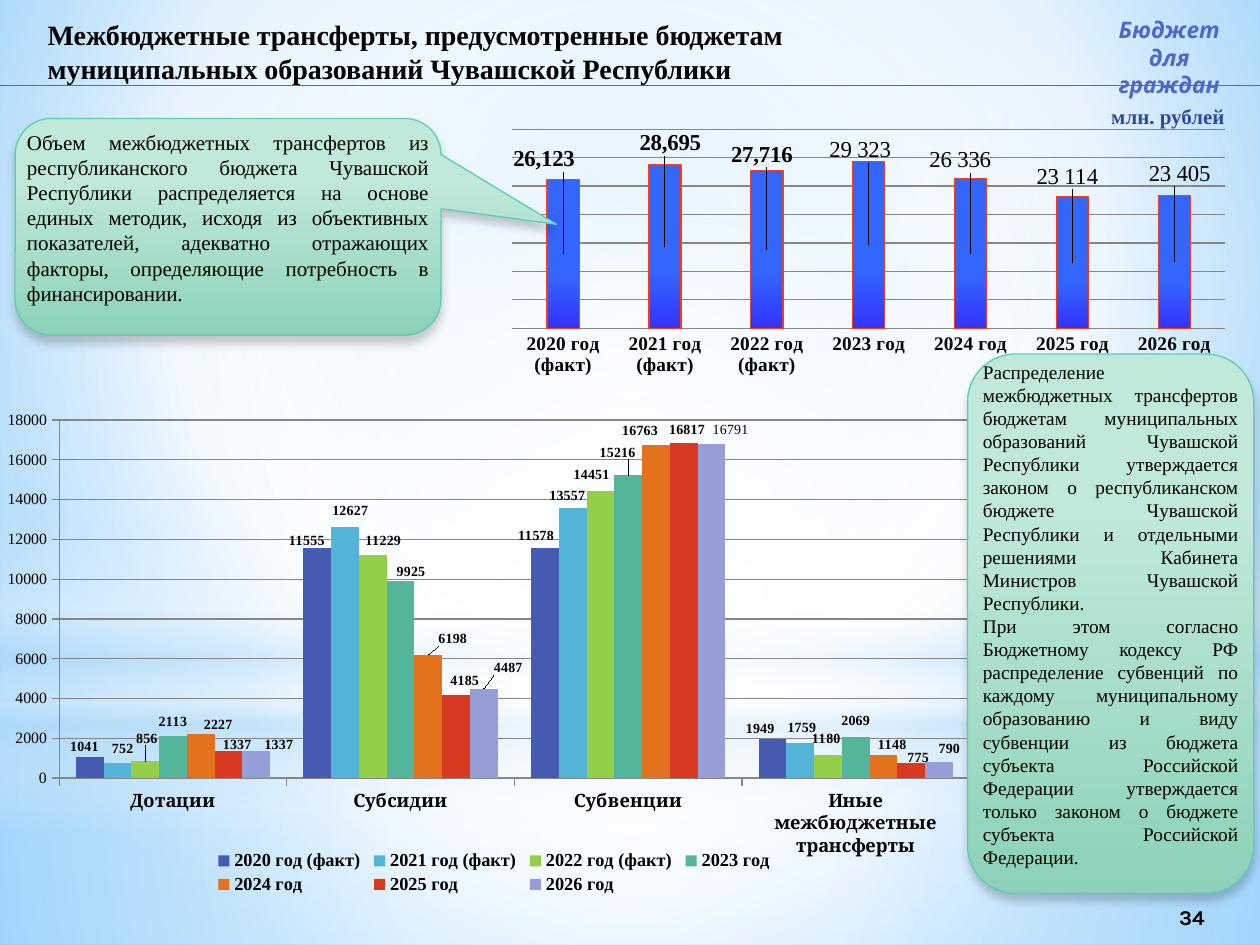
from dataclasses import dataclass
from typing import NamedTuple, Optional

from pptx import Presentation, oxml
from pptx import util as u
from pptx.chart import data as chartdata
from pptx.dml.color import RGBColor
from pptx.enum import chart as charts, shapes, text
from pptx.oxml import ns


@dataclass(frozen=True)
class Theme:
    serif: str = "Times New Roman"
    sans: str = "Karla"
    category: str = "Cambria"
    ink: str = "000000"
    accent: str = "4E67C8"
    unit: str = "31489F"
    mint: str = "5DCEAF"
    grid: str = "868686"
    bar_edge: str = "F13C1E"
    title: float = 16
    small: float = 8
    axis: float = 9
    legend: float = 10.5
    body: float = 11
    lead: float = 12
    label: float = 13


class Frame(NamedTuple):
    left: float
    top: float
    width: float
    height: float

    def points(self) -> list:
        return [u.Pt(value) for value in self]


class Gradient(NamedTuple):
    stops: tuple
    angle: int = 90
    focus: Optional[tuple] = None


class Style(NamedTuple):
    size: float
    font: str
    color: str
    bold: bool = False
    italic: bool = False


class Series(NamedTuple):
    name: str
    values: tuple
    fill: object
    shifts: tuple
    plain: tuple = ()


THEME = Theme()
CENTER = (50, 50, 50, 50)
SKY = Gradient(((0, "9ED5FF", 100), (60, "FFFFFF", 100), (100, "5BB9FF", 100)), focus=(20, 10, 20, 60))
MINT = Gradient(((28, "C0E9DA", 100), (100, "8CD1B8", 100)))
BLUE = Gradient(((0, "3333FF", 100), (35, "3366FF", 100), (100, "3366FF", 100)), 270)
RECT = shapes.MSO_SHAPE.RECTANGLE
WASHES = (
    (RECT, Frame(0, 401.76, 720, 138.24),
     Gradient(((0, "FFFFFF", 91), (37, "FFFFFF", 76), (100, "B4DCFA", 79)), focus=CENTER)),
    (RECT, Frame(0, 0, 720, 401.76),
     Gradient(((0, "FFFFFF", 89), (48, "FFFFFF", 62), (100, "B4DCFA", 79)), focus=CENTER)),
    (RECT, Frame(0, 296.64, 720, 180),
     Gradient(((0, "FFFFFF", 0), (29, "FFFFFF", 30), (45, "B4DCFA", 40),
               (55, "FFFFFF", 26), (65, "B4DCFA", 60), (100, "FFFFFF", 0)))),
    (shapes.MSO_SHAPE.OVAL, Frame(0, 126, 720, 401.76),
     Gradient(((0, "FFFFFF", 100), (56, "FFFFFF", 0)), focus=CENTER)),
)
YEARS = ("2020 год (факт)", "2021 год (факт)", "2022 год (факт)",
         "2023 год", "2024 год", "2025 год", "2026 год")
KINDS = ("Дотации", "Субсидии", "Субвенции", "Иные межбюджетные трансферты")
TOTAL = Series("Series 1", (26123, 28695, 27716, 29323, 26336, 23114, 23405), BLUE,
               ((-11, -54), (3, -59), (-3, -54), (-5, -54), (-6, -53), (-3, -49), (3, -50)),
               (3, 4, 5, 6))
TRANSFERS = (
    Series(YEARS[0], (1041, 11555, 11578, 1949), "455BB1", ((-3, 1), (-6, 3), (-5, 0), (-7, 1))),
    Series(YEARS[1], (752, 12627, 13557, 1759), "53B4D7", ((3, -1), (3, -2), (-3, 0), (1, -2))),
    Series(YEARS[2], (856, 11229, 14451, 1180), "94CF49", ((1, -6), (6, -1), (-5, -2), (-1, -2))),
    Series(YEARS[3], (2113, 9925, 15216, 2069), "53B69B", ((0, -1), (6, 2), (-6, -6), (0, -2))),
    Series(YEARS[4], (2227, 6198, 16763, 1148), "E2721D", ((10, 2), (14, -2), (-9, -1), (5, 1))),
    Series(YEARS[5], (1337, 4185, 16817, 775), "D73A20", ((5, 3), (5, -1), (2, -1), (4, 4))),
    Series(YEARS[6], (1337, 4487, 16791, 790), "959ED6", ((13, 3), (14, -5), (11, -1), (6, -1)), (2,)),
)
ABOUT = ("Объем межбюджетных трансфертов из республиканского бюджета Чувашской Республики "
         "распределяется на основе единых методик, исходя из объективных показателей, адекватно "
         "отражающих факторы, определяющие потребность в финансировании.",)
RULES = ("Распределение межбюджетных трансфертов бюджетам муниципальных образований Чувашской "
         "Республики утверждается законом о республиканском бюджете Чувашской Республики и "
         "отдельными решениями Кабинета Министров Чувашской Республики.",
         "При этом согласно Бюджетному кодексу РФ распределение субвенций по каждому муниципальному "
         "образованию и виду субвенции из бюджета субъекта Российской Федерации утверждается только "
         "законом о бюджете субъекта Российской Федерации.")


def paint(props, fill: Gradient) -> None:
    stops = "".join(
        f'<a:gs pos="{place * 1000}"><a:srgbClr val="{color}"><a:alpha val="{alpha * 1000}"/></a:srgbClr></a:gs>'
        for place, color, alpha in fill.stops)
    if fill.focus:
        sides = " ".join(f'{side}="{value * 1000}"' for side, value in zip("ltrb", fill.focus))
        course = f'<a:path path="circle"><a:fillToRect {sides}/></a:path>'
    else:
        course = f'<a:lin ang="{fill.angle * 60000}" scaled="0"/>'
    gradient = oxml.parse_xml(
        f'<a:gradFill {ns.nsdecls("a")} rotWithShape="1"><a:gsLst>{stops}</a:gsLst>{course}</a:gradFill>')
    props.replace(props.find(ns.qn("a:solidFill")), gradient)


def set_font(font, style: Style) -> None:
    font.size, font.name = u.Pt(style.size), style.font
    font.bold, font.italic = style.bold, style.italic
    font.color.rgb = RGBColor.from_string(style.color)


def set_line(line, color: str, width: float = 0.75) -> None:
    line.color.rgb = RGBColor.from_string(color)
    line.width = u.Pt(width)


def write(box, lines: tuple, style: Style, align, anchor=text.MSO_ANCHOR.TOP, insets=(7.2, 3.6, 7.2, 3.6)) -> None:
    frame = box.text_frame
    frame.word_wrap, frame.vertical_anchor = True, anchor
    (frame.margin_left, frame.margin_top,
     frame.margin_right, frame.margin_bottom) = [u.Pt(inset) for inset in insets]
    for index, line in enumerate(lines):
        para = frame.paragraphs[0] if index == 0 else frame.add_paragraph()
        para.alignment = align
        span = para.add_run()
        span.text = line
        set_font(span.font, style)


def add_label(page, frame: Frame, lines: tuple, style: Style, align, **options) -> None:
    write(page.shapes.add_textbox(*frame.points()), lines, style, align, **options)


def add_filled(page, kind, frame: Frame, fill: Gradient):
    shape = page.shapes.add_shape(kind, *frame.points())
    shape.shadow.inherit = False
    shape.fill.solid()
    paint(shape._element.spPr, fill)
    shape.line.fill.background()
    return shape


def add_panel(page, kind, frame: Frame, adjustments: tuple, lines: tuple, size: float) -> None:
    panel = add_filled(page, kind, frame, MINT)
    for index, value in enumerate(adjustments):
        panel.adjustments[index] = value
    set_line(panel.line, THEME.mint)
    panel._element.spPr.find(ns.qn("a:effectLst")).append(oxml.parse_xml(
        f'<a:outerShdw {ns.nsdecls("a")} blurRad="{u.Pt(5)}" dist="{u.Pt(4)}" dir="5400000" rotWithShape="0">'
        f'<a:srgbClr val="{THEME.ink}"><a:alpha val="20000"/></a:srgbClr></a:outerShdw>'))
    write(panel, lines, Style(size, THEME.serif, THEME.ink), text.PP_ALIGN.JUSTIFY,
          text.MSO_ANCHOR.MIDDLE, (0.72, 0.72, 0.72, 11.52))


def place(parent, index: int, **values) -> None:
    for old in parent.findall(ns.qn("c:layout")):
        parent.remove(old)
    items = "".join(f'<c:{key} val="{value}"/>' for key, value in values.items())
    parent.insert(index, oxml.parse_xml(
        f'<c:layout {ns.nsdecls("c")}><c:manualLayout>{items}</c:manualLayout></c:layout>'))


def label_points(series, item: Series, frame: Frame, style: Style, position) -> None:
    for index, (across, down) in enumerate(item.shifts):
        label = series.points[index].data_label
        if index in item.plain:
            value = item.values[index]
            span = label.text_frame.paragraphs[0].add_run()
            span.text = f"{value:,}".replace(",", " ") if item is TOTAL else str(value)
            set_font(span.font, style._replace(bold=False))
        else:
            set_font(label.font, style)
        label.position = position
        element = series.data_labels._element.dLbl_lst[index]
        place(element, 1, x=round(across / frame.width, 4), y=round(down / frame.height, 4))


def add_columns(page, kind, frame: Frame, categories: tuple, items: tuple, number: str, gap: int,
                label_style: Style, position, category_style: Style, top: int, step: int, area: tuple):
    data = chartdata.CategoryChartData(number_format=number)
    data.categories = categories
    for item in items:
        data.add_series(item.name, item.values)
    chart = page.shapes.add_chart(kind, *frame.points(), data).chart
    chart.has_title = chart.has_legend = False
    set_font(chart.font, category_style)
    plot = chart.plots[0]
    plot.gap_width, plot.vary_by_categories = gap, False
    for series, item in zip(plot.series, items):
        series.format.fill.solid()
        if isinstance(item.fill, Gradient):
            paint(series._element.spPr, item.fill)
            set_line(series.format.line, THEME.bar_edge)
        else:
            series.format.fill.fore_color.rgb = RGBColor.from_string(item.fill)
        labels = series.data_labels
        labels.show_value, labels.number_format, labels.number_format_is_linked = True, number, False
        set_font(labels.font, label_style)
        label_points(series, item, frame, label_style, position)
    values = chart.value_axis
    values.minimum_scale, values.maximum_scale, values.major_unit = 0, top, step
    values.has_major_gridlines = True
    for line in (values.major_gridlines.format.line, values.format.line, chart.category_axis.format.line):
        set_line(line, THEME.grid)
    set_font(values.tick_labels.font, Style(THEME.axis, THEME.serif, THEME.ink, True))
    values.tick_labels.font.bold = False
    set_font(chart.category_axis.tick_labels.font, category_style)
    place(chart._chartSpace.chart.plotArea, 0, layoutTarget="inner", xMode="edge", yMode="edge",
          **dict(zip("xywh", area)))
    return chart


def main() -> None:
    deck = Presentation()
    deck.slide_width, deck.slide_height = u.Pt(720), u.Pt(540)
    page = deck.slides.add_slide(deck.slide_layouts[6])
    page.background.fill.solid()
    paint(page._element.find(".//" + ns.qn("p:bgPr")), SKY)
    for kind, frame, fill in WASHES:
        add_filled(page, kind, frame, fill)

    totals = add_columns(
        page, charts.XL_CHART_TYPE.COLUMN_STACKED, Frame(292.32, 59.04, 408.24, 156.24), YEARS, (TOTAL,),
        "#,##0", 217, Style(THEME.label, THEME.serif, THEME.ink, True), charts.XL_LABEL_POSITION.CENTER,
        Style(THEME.body, THEME.serif, THEME.ink, True), 35000, 5000, (0.001, 0.095, 0.999, 0.728))
    totals.plots[0].overlap = 100
    totals.value_axis.visible = False
    totals.category_axis.major_tick_mark = charts.XL_TICK_MARK.NONE

    kinds = add_columns(
        page, charts.XL_CHART_TYPE.COLUMN_CLUSTERED, Frame(4.32, 208.8, 550.08, 306), KINDS, TRANSFERS,
        "0", 120, Style(THEME.small, THEME.serif, THEME.ink, True), charts.XL_LABEL_POSITION.OUTSIDE_END,
        Style(THEME.legend, THEME.category, THEME.ink, True), 18000, 2000, (0.058, 0.102, 0.948, 0.669))
    kinds.has_legend = True
    kinds.legend.position = charts.XL_LEGEND_POSITION.BOTTOM
    kinds.legend.include_in_layout = False
    set_font(kinds.legend.font, Style(THEME.legend, THEME.serif, THEME.ink, True))
    place(kinds.legend._element, 1, xMode="edge", yMode="edge", x=0.21, y=0.9, w=0.59, h=0.095)

    add_label(page, Frame(641.52, 509.76, 79.2, 28.8), ("34",), Style(THEME.lead, THEME.sans, THEME.ink, True),
              text.PP_ALIGN.CENTER, anchor=text.MSO_ANCHOR.MIDDLE)
    rule = page.shapes.add_connector(shapes.MSO_CONNECTOR.STRAIGHT, *Frame(0, 48.96, 720, 48.96).points())
    set_line(rule.line, THEME.accent)
    rule._element.spPr.append(oxml.parse_xml(f'<a:effectLst {ns.nsdecls("a")}/>'))
    add_label(page, Frame(619.92, 5.76, 96.48, 38.88), ("Бюджет", "для граждан"),
              Style(THEME.label, THEME.sans, THEME.accent, True, True), text.PP_ALIGN.CENTER)
    add_label(page, Frame(20.16, 6.48, 543.6, 42.48),
              ("Межбюджетные трансферты, предусмотренные бюджетам муниципальных образований Чувашской Республики",),
              Style(THEME.title, THEME.serif, THEME.ink, True), text.PP_ALIGN.LEFT)
    add_panel(page, shapes.MSO_SHAPE.ROUNDED_RECTANGULAR_CALLOUT, Frame(8.64, 67.68, 243.36, 123.84),
              (0.771, -0.012, 0.167), ABOUT, THEME.lead)
    add_label(page, Frame(603.36, 59.04, 96.48, 17.28), ("млн. рублей",),
              Style(THEME.lead, THEME.serif, THEME.unit, True), text.PP_ALIGN.RIGHT, insets=(0, 0, 0, 0))
    add_panel(page, shapes.MSO_SHAPE.ROUNDED_RECTANGLE, Frame(552.96, 202.32, 163.44, 308.16), (0.167,),
              RULES, THEME.body)
    deck.save("out.pptx")


if __name__ == "__main__":
    main()
